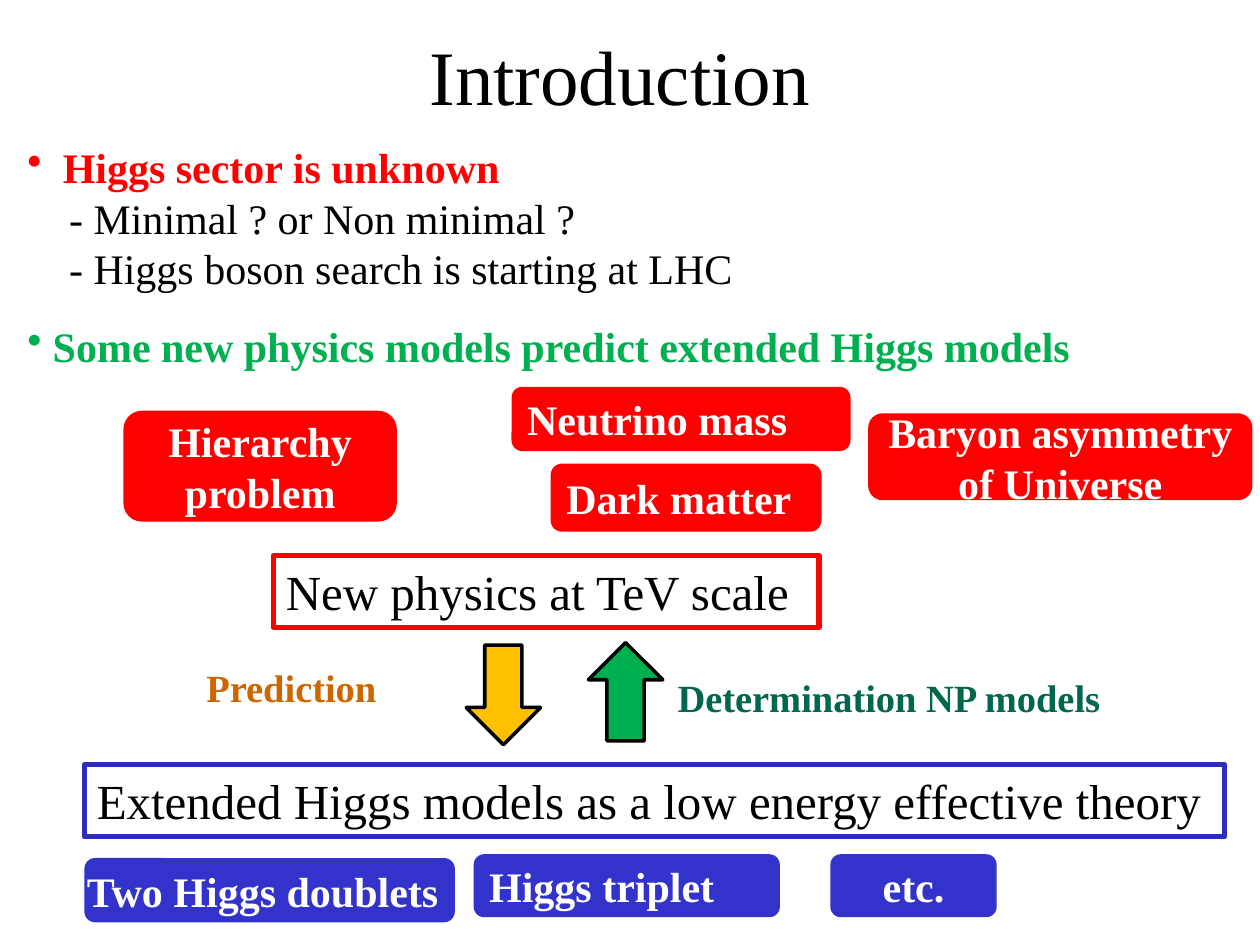
from pptx import Presentation
from pptx.dml.color import RGBColor
from pptx.enum.shapes import MSO_SHAPE as Shape
from pptx.enum.text import MSO_ANCHOR as Anchor, PP_ALIGN as Align
from pptx.oxml.ns import qn
from pptx.util import Emu, Pt
from lxml.etree import SubElement

PX = 9144  # 100 px to the inch
FONT = "Times New Roman"
BLACK = RGBColor(0x00, 0x00, 0x00)
WHITE = RGBColor(0xFF, 0xFF, 0xFF)
RED = RGBColor(0xFF, 0x00, 0x00)
GREEN = RGBColor(0x00, 0xB0, 0x50)
DARK_GREEN = RGBColor(0x00, 0x66, 0x4D)
AMBER = RGBColor(0xFF, 0xC0, 0x00)
BROWN = RGBColor(0xCC, 0x66, 0x00)
BLUE = RGBColor(0x33, 0x33, 0xCC)
FRAME_BLUE = RGBColor(0x2D, 0x2D, 0xB9)


def emu(*lengths):
    return [Emu(length * PX) for length in lengths]


def style(para, size, color, bold=False, align=Align.LEFT):
    para.alignment = align
    for span in para.runs:
        font = span.font
        font.name, font.size, font.bold = FONT, Pt(size), bold
        font.color.rgb = color


def write(shape, text, size, color, bold=False, align=Align.LEFT, anchor=Anchor.TOP):
    frame = shape.text_frame
    frame.word_wrap = True
    frame.vertical_anchor = anchor
    frame.text = text
    for para in frame.paragraphs:
        style(para, size, color, bold, align)
    return frame


def add_text(shapes, box, text, size, color, **options):
    return write(shapes.add_textbox(*emu(*box)), text, size, color, **options)


def add_block(shapes, kind, box, fill=None, line=None, width=0):
    block = shapes.add_shape(kind, *emu(*box))
    block.shadow.inherit = False
    if fill is None:
        block.fill.background()
    else:
        block.fill.solid()
        block.fill.fore_color.rgb = fill
    if line is None:
        block.line.fill.background()
    else:
        block.line.color.rgb = line
        block.line.width = Pt(width)
    return block


def add_pill(shapes, box, fill, text="", align=Align.CENTER):
    pill = add_block(shapes, Shape.ROUNDED_RECTANGLE, box, fill)
    if text:
        frame = write(pill, text, 24, WHITE, True, align, Anchor.MIDDLE)
        for para in frame.paragraphs:
            para.line_spacing = Pt(29)


def add_frame(shapes, box, text, line):
    write(add_block(shapes, Shape.RECTANGLE, box, line=line, width=3), text, 28, BLACK)


def add_points(shapes, box, heading, color, hang, details=()):
    """A bulleted bold heading with plain indented lines below it."""
    frame = add_text(shapes, box, "\n".join([heading, *details]), 24, BLACK)
    for index, para in enumerate(frame.paragraphs):
        para.line_spacing = Pt(29)
        props = para._p.get_or_add_pPr()
        if index == 0:
            props.set("marL", str(hang * PX))
            props.set("indent", str(-hang * PX))
            SubElement(props, qn("a:buChar")).set("char", "•")
            style(para, 24, color, True)
        else:
            props.set("marL", str(33 * PX))


def add_motivations(shapes, left, top):
    for x, y, width, height, text, align in (
        (591, 21, 305, 69, "Baryon asymmetry\nof Universe", Align.CENTER),
        (339, 61, 215, 54, "Dark matter", Align.LEFT),
        (308, 0, 269, 51, "Neutrino mass", Align.LEFT),
        (0, 19, 217, 88, "Hierarchy problem", Align.CENTER),
    ):
        add_pill(shapes, (left + x, top + y, width, height), RED, text, align)


def add_exchange(shapes, left, top):
    """Arrows between theory and models, each with its label."""
    add_text(shapes, (left, top + 12, 157, 47), "Prediction", 22, BROWN, bold=True)
    add_block(shapes, Shape.DOWN_ARROW, (left + 216, top + 2, 59, 79), AMBER, BLACK, 2)
    feedback = shapes.add_group_shape().shapes
    add_block(feedback, Shape.UP_ARROW, (left + 313, top, 59, 78), GREEN, BLACK, 2)
    add_text(feedback, (left + 374, top + 20, 360, 47), "Determination NP models",
             22, DARK_GREEN, bold=True)


def add_examples(shapes, left, top):
    add_pill(shapes, (left, top + 3, 294, 51), BLUE)
    add_text(shapes, (left - 8, top + 4, 302, 50), "Two Higgs doublets", 24, WHITE, bold=True)
    add_pill(shapes, (left + 309, top, 243, 50), BLUE, "Higgs triplet", Align.LEFT)
    add_pill(shapes, (left + 592, top, 132, 50), BLUE, "etc.")


def main():
    deck = Presentation()
    deck.slide_width, deck.slide_height = emu(1000, 750)
    page = deck.slides.add_slide(deck.slide_layouts[6])
    shapes = page.shapes
    add_text(shapes, (67, -3, 850, 125), "Introduction", 44, BLACK,
             align=Align.CENTER, anchor=Anchor.MIDDLE)
    add_points(shapes, (12, 107, 600, 131), "Higgs sector is unknown", RED, 28,
               ("- Minimal ? or Non minimal ?", "- Higgs boson search is starting at LHC"))
    add_points(shapes, (12, 249, 853, 50),
               "Some new physics models predict extended Higgs models", GREEN, 20)
    add_motivations(shapes, 98, 307)
    add_frame(shapes, (217, 441, 433, 57), "New physics at TeV scale", RED)
    add_exchange(shapes, 154, 510)
    add_frame(shapes, (67, 607, 905, 57),
              "Extended Higgs models as a low energy effective theory", FRAME_BLUE)
    add_examples(shapes, 67, 678)
    deck.save("out.pptx")


if __name__ == "__main__":
    main()
